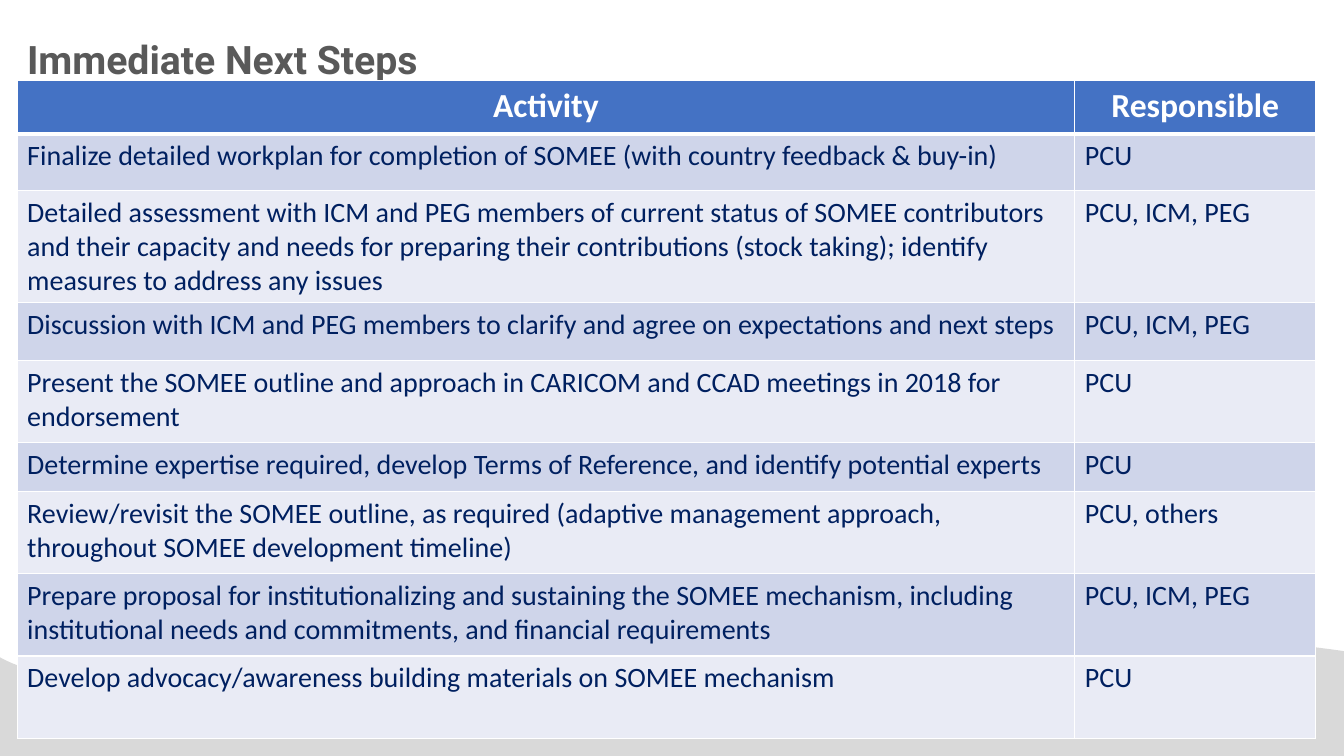
from dataclasses import dataclass

from lxml import etree
from pptx import Presentation
from pptx.dml.color import RGBColor
from pptx.enum.text import MSO_ANCHOR, PP_ALIGN
from pptx.oxml.ns import qn
from pptx.util import Inches, Pt

TOP = MSO_ANCHOR.TOP
LEFT, CENTER = PP_ALIGN.LEFT, PP_ALIGN.CENTER


@dataclass(frozen=True)
class Theme:
    wave: str = "D9D9D9"
    title: str = "595959"
    header: str = "4472C4"
    bands: tuple = ("CFD5EA", "E9EBF5")
    body: str = "002060"
    white: str = "FFFFFF"
    title_font: str = "Roboto"
    table_font: str = "Calibri"
    title_size: int = 28
    header_size: int = 24
    body_size: int = 20


theme = Theme()


def write(para, text, color, **formats):
    span = para.add_run()
    span.text = text
    span.font.color.rgb = RGBColor.from_string(color)
    for name, value in formats.items():
        setattr(span.font, name, value)


def add_border(cell, side, width):
    line = etree.SubElement(cell._tc.get_or_add_tcPr(), qn(f"a:{side}"), w=str(Pt(width)))
    fill = etree.SubElement(line, qn("a:solidFill"))
    etree.SubElement(fill, qn("a:srgbClr"), val=theme.white)


deck = Presentation()
deck.slide_width, deck.slide_height = Inches(13.33), Inches(7.5)
page = deck.slides.add_slide(deck.slide_layouts[6])

# Grey wave along the bottom, its Bezier curves sampled into short lines
curves = [
    ((13.33, 6.46), (11.65, 6.22), (9.02, 6.16), (5.02, 6.63)),
    ((5.02, 6.63), (1.33, 7.07), (0.26, 6.68), (-0.02, 6.51)),
]
steps = 40
outline = [(13.33, 6.46)]
for curve in curves:
    for step in range(1, steps + 1):
        t = step / steps
        weights = ((1 - t) ** 3, 3 * t * (1 - t) ** 2, 3 * t ** 2 * (1 - t), t ** 3)
        outline.append(tuple(sum(w * point[axis] for w, point in zip(weights, curve))
                             for axis in (0, 1)))
outline.append((-0.02, 7.5))
builder = page.shapes.build_freeform(Inches(13.33), Inches(7.5))
builder.add_line_segments([(Inches(x), Inches(y)) for x, y in outline], close=True)
wave = builder.convert_to_shape()
wave.shadow.inherit = False
wave.fill.solid()
wave.fill.fore_color.rgb = RGBColor.from_string(theme.wave)
wave.line.fill.background()

# Title
box = page.shapes.add_textbox(Inches(0.17), Inches(0.21), Inches(10.56), Inches(0.45))
frame = box.text_frame
frame.word_wrap = True
frame.vertical_anchor = TOP
para = frame.paragraphs[0]
para.line_spacing = Pt(40)
para.space_after = Pt(4)
write(para, "Immediate Next Steps", theme.title,
      name=theme.title_font, size=Pt(theme.title_size), bold=True)

# Table of activities
rows = [
    (0.53, "Activity", "Responsible"),
    (0.56, "Finalize detailed workplan for completion of SOMEE (with country feedback & buy-in)",
     "PCU"),
    (1.11, "Detailed assessment with ICM and PEG members of current status of SOMEE contributors "
           "and their capacity and needs for preparing their contributions (stock taking); "
           "identify measures to address any issues", "PCU, ICM, PEG"),
    (0.58, "Discussion with ICM and PEG members to clarify and agree on expectations and next steps",
     "PCU, ICM, PEG"),
    (0.81, "Present the SOMEE outline and approach in CARICOM and CCAD meetings in 2018 "
           "for endorsement", "PCU"),
    (0.49, "Determine expertise required, develop Terms of Reference, and identify potential experts",
     "PCU"),
    (0.81, "Review/revisit the SOMEE outline, as required (adaptive management approach, "
           "throughout SOMEE development timeline)", "PCU, others"),
    (0.82, "Prepare proposal for institutionalizing and sustaining the SOMEE mechanism, including "
           "institutional needs and commitments, and financial requirements", "PCU, ICM, PEG"),
    (0.82, "Develop advocacy/awareness building materials on SOMEE mechanism", "PCU"),
]
widths = (10.49, 2.39)
table = page.shapes.add_table(len(rows), len(widths), Inches(0.17), Inches(0.8),
                              Inches(sum(widths)), Inches(sum(row[0] for row in rows))).table
for column, width in zip(table.columns, widths):
    column.width = Inches(width)

for index, (height, *texts) in enumerate(rows):
    table.rows[index].height = Inches(height)
    is_header = index == 0
    fill = theme.header if is_header else theme.bands[(index - 1) % 2]
    color = theme.white if is_header else theme.body
    size = theme.header_size if is_header else theme.body_size
    for cell, text in zip(table.rows[index].cells, texts):
        para = cell.text_frame.paragraphs[0]
        para.alignment = CENTER if is_header else LEFT
        write(para, text, color, name=theme.table_font, size=Pt(size), bold=is_header)
        # Borders come before the fill in the cell properties
        for side in ("lnL", "lnR", "lnT", "lnB"):
            heavy = (is_header and side == "lnB") or (index == 1 and side == "lnT")
            add_border(cell, side, 3 if heavy else 1)
        cell.fill.solid()
        cell.fill.fore_color.rgb = RGBColor.from_string(fill)

deck.save("out.pptx")
